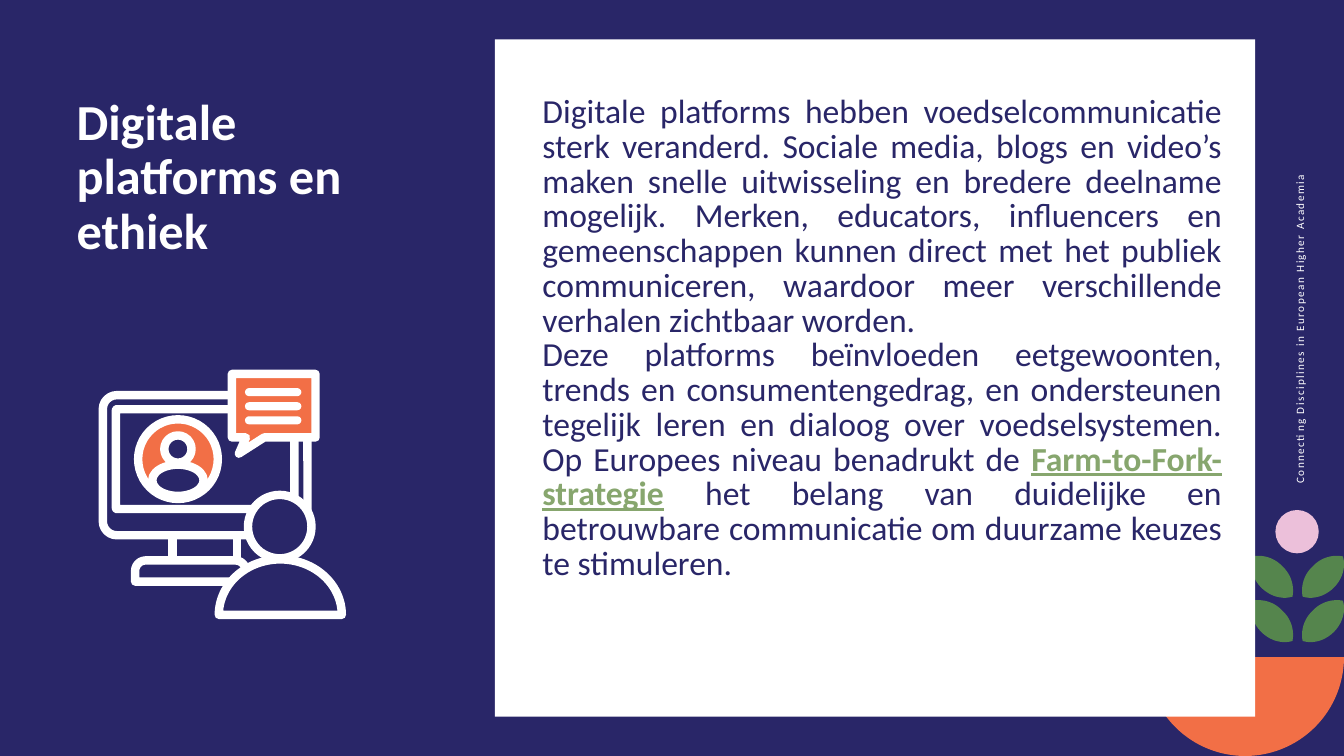
from lxml.etree import SubElement
from pptx import Presentation
from pptx.dml.color import RGBColor
from pptx.enum.shapes import MSO_SHAPE as Preset
from pptx.enum.text import MSO_ANCHOR as Anchor, MSO_AUTO_SIZE as AutoSize, PP_ALIGN as Align
from pptx.oxml.ns import qn
from pptx.util import Inches, Pt

NAVY = RGBColor(0x29, 0x26, 0x68)
WHITE = RGBColor(0xFF, 0xFF, 0xFF)
ORANGE = RGBColor(0xF2, 0x6F, 0x46)
GREEN = RGBColor(0x55, 0x85, 0x4D)
PINK = RGBColor(0xEC, 0xC0, 0xDA)
LINK_GREEN = RGBColor(0x87, 0xA6, 0x6E)

TOP_HALF, BOTTOM_HALF = (108, 0), (0, 108)  # chord angles in units of 100000
LEAF_CURVES = [
    [(0.01, 0.01), (0.11, -0.01), (0.23, 0.02), (0.31, 0.11)],
    [(0.31, 0.11), (0.40, 0.19), (0.43, 0.31), (0.41, 0.41)],
    [(0.41, 0.41), (0.31, 0.44), (0.19, 0.41), (0.10, 0.32)],
    [(0.10, 0.32), (0.01, 0.23), (-0.02, 0.11), (0.01, 0.01)],
]

TITLE = "Digitale platforms en ethiek"
SIDE_LINE = "Connecting Disciplines in European Higher Academia"
PARAGRAPHS = [
    [("Digitale platforms hebben voedselcommunicatie sterk veranderd. Sociale media, blogs "
      "en video’s maken snelle uitwisseling en bredere deelname mogelijk. Merken, educators, "
      "influencers en gemeenschappen kunnen direct met het publiek communiceren, waardoor "
      "meer verschillende verhalen zichtbaar worden.", False)],
    [("Deze platforms beïnvloeden eetgewoonten, trends en consumentengedrag, en ondersteunen "
      "tegelijk leren en dialoog over voedselsystemen. Op Europees niveau benadrukt de ", False),
     ("Farm-to-Fork-strategie", True),
     (" het belang van duidelijke en betrouwbare communicatie om duurzame keuzes te "
      "stimuleren.", False)],
]


def paint(shape, fill, outline=None):
    shape.shadow.inherit = False
    shape.fill.solid()
    shape.fill.fore_color.rgb = fill
    if outline is None:
        shape.line.fill.background()
    else:
        shape.line.color.rgb = outline
        shape.line.width = Pt(6)


def add_preset(slide, preset, box, fill, outline=None, adjustments=()):
    shape = slide.shapes.add_shape(preset, *map(Inches, box))
    for index, value in enumerate(adjustments):
        shape.adjustments[index] = value
    paint(shape, fill, outline)


def add_outline(slide, left, top, points, fill, outline=None):
    """Draw a closed shape through points given relative to left and top."""
    corners = [(Inches(left + x), Inches(top + y)) for x, y in points]
    builder = slide.shapes.build_freeform(*corners[0])
    builder.add_line_segments(corners[1:])
    paint(builder.convert_to_shape(), fill, outline)


def bezier_points(curve, steps=10):
    for step in range(steps):
        t = step / steps
        weights = ((1 - t) ** 3, 3 * t * (1 - t) ** 2, 3 * t ** 2 * (1 - t), t ** 3)
        yield tuple(sum(w * point[axis] for w, point in zip(weights, curve)) for axis in (0, 1))


def format_font(font, color, **values):
    font.name = "Calibri"
    font.color.rgb = color
    for name, value in values.items():
        setattr(font, name, value)


def format_frame(frame):
    values = {"word_wrap": True, "auto_size": AutoSize.NONE, "vertical_anchor": Anchor.TOP}
    for name, value in values.items():
        setattr(frame, name, value)


def place_placeholder(holder, box):
    """Move a placeholder to its box and in front of everything drawn so far."""
    for name, value in zip(("left", "top", "width", "height"), box):
        setattr(holder, name, Inches(value))
    holder.element.getparent().append(holder.element)
    format_frame(holder.text_frame)


def draw_plant(slide, left, top):
    leaf = [point for curve in LEAF_CURVES for point in bezier_points(curve)]
    mirrored = [(0.42 - x, y) for x, y in leaf]
    add_preset(slide, Preset.CHORD, (left, top + 0.48, 1.96, 1.96), ORANGE,
               adjustments=BOTTOM_HALF)
    for row in range(2):
        leaf_top = top + 0.45 + 0.44 * row
        add_outline(slide, left + 1.04, leaf_top, leaf, GREEN)
        add_outline(slide, left + 1.54, leaf_top, mirrored, GREEN)
    add_preset(slide, Preset.OVAL, (left + 1.28, top, 0.43, 0.43), PINK)


def draw_side_line(slide, left, top):
    box = slide.shapes.add_textbox(*map(Inches, (left, top, 4.77, 0.24)))
    box.rotation = 270
    format_frame(box.text_frame)
    run = box.text_frame.paragraphs[0].add_run()
    run.text = SIDE_LINE
    format_font(run.font, WHITE, size=Pt(8))
    run._r.get_or_add_rPr().set("spc", "100")


def draw_online_meeting(slide, left, top):
    """Icon of a person facing a screen with an avatar and a speech bubble."""
    def part(preset, x, y, width, height, fill=NAVY, outline=WHITE, adjustments=()):
        add_preset(slide, preset, (left + x, top + y, width, height), fill, outline, adjustments)

    # Stand and monitor
    part(Preset.RECTANGLE, 0.73, 1.64, 0.64, 0.25)
    part(Preset.ROUND_2_SAME_RECTANGLE, 0.36, 1.89, 1.1, 0.21, adjustments=(0.5, 0))
    part(Preset.ROUNDED_RECTANGLE, 0.04, 0.25, 2.03, 1.39, adjustments=(0.1,))
    part(Preset.ROUNDED_RECTANGLE, 0.17, 0.39, 1.77, 0.99, adjustments=(0.01,))
    # Avatar
    part(Preset.OVAL, 0.39, 0.49, 0.79, 0.79, ORANGE)
    part(Preset.OVAL, 0.53, 0.94, 0.51, 0.31)
    part(Preset.OVAL, 0.65, 0.65, 0.27, 0.27)
    # Speech bubble
    bubble = [(1.32, 0.04), (2.15, 0.04), (2.15, 0.67), (1.64, 0.67),
              (1.39, 0.83), (1.46, 0.67), (1.32, 0.67)]
    add_outline(slide, left, top, bubble, ORANGE, WHITE)
    for row in range(3):
        part(Preset.ROUNDED_RECTANGLE, 1.45, 0.18 + 0.14 * row, 0.56, 0.08, WHITE, None, (0.5,))
    # Viewer
    part(Preset.CHORD, 1.19, 1.88, 1.22, 1.1, adjustments=TOP_HALF)
    part(Preset.OVAL, 1.48, 1.24, 0.63, 0.63)


def fill_title(title, box):
    place_placeholder(title, box)
    title.text_frame.text = TITLE
    paragraph = title.text_frame.paragraphs[0]
    paragraph.alignment = Align.LEFT
    paragraph.line_spacing = 0.9
    format_font(paragraph.runs[0].font, WHITE, size=Pt(36), bold=True)


def fill_body(body, box):
    place_placeholder(body, box)
    frame = body.text_frame
    layout = {"alignment": Align.JUSTIFY, "line_spacing": Pt(24.8), "space_before": Pt(0)}
    for index, pieces in enumerate(PARAGRAPHS):
        paragraph = frame.add_paragraph() if index else frame.paragraphs[0]
        for name, value in layout.items():
            setattr(paragraph, name, value)
        properties = paragraph._p.get_or_add_pPr()
        properties.set("marL", "0")
        properties.set("indent", "0")
        SubElement(properties, qn("a:buNone"))
        for text, emphasis in pieces:
            run = paragraph.add_run()
            run.text = text
            format_font(run.font, LINK_GREEN if emphasis else NAVY, size=Pt(24),
                        bold=emphasis, underline=emphasis)


def main():
    deck = Presentation()
    deck.slide_width, deck.slide_height = Inches(13.33), Inches(7.5)
    slide = deck.slides.add_slide(deck.slide_layouts[1])
    slide.background.fill.solid()
    slide.background.fill.fore_color.rgb = NAVY
    draw_side_line(slide, 10.51, 2.39)
    draw_plant(slide, 11.37, 5.06)
    add_preset(slide, Preset.RECTANGLE, (4.91, 0.39, 7.54, 6.72), WHITE)
    draw_online_meeting(slide, 0.98, 3.67)
    fill_body(slide.placeholders[1], (5.28, 0.9, 6.94, 5.65))
    fill_title(slide.shapes.title, (0.66, 0.91, 3.8, 1.94))
    deck.save("out.pptx")


if __name__ == "__main__":
    main()
